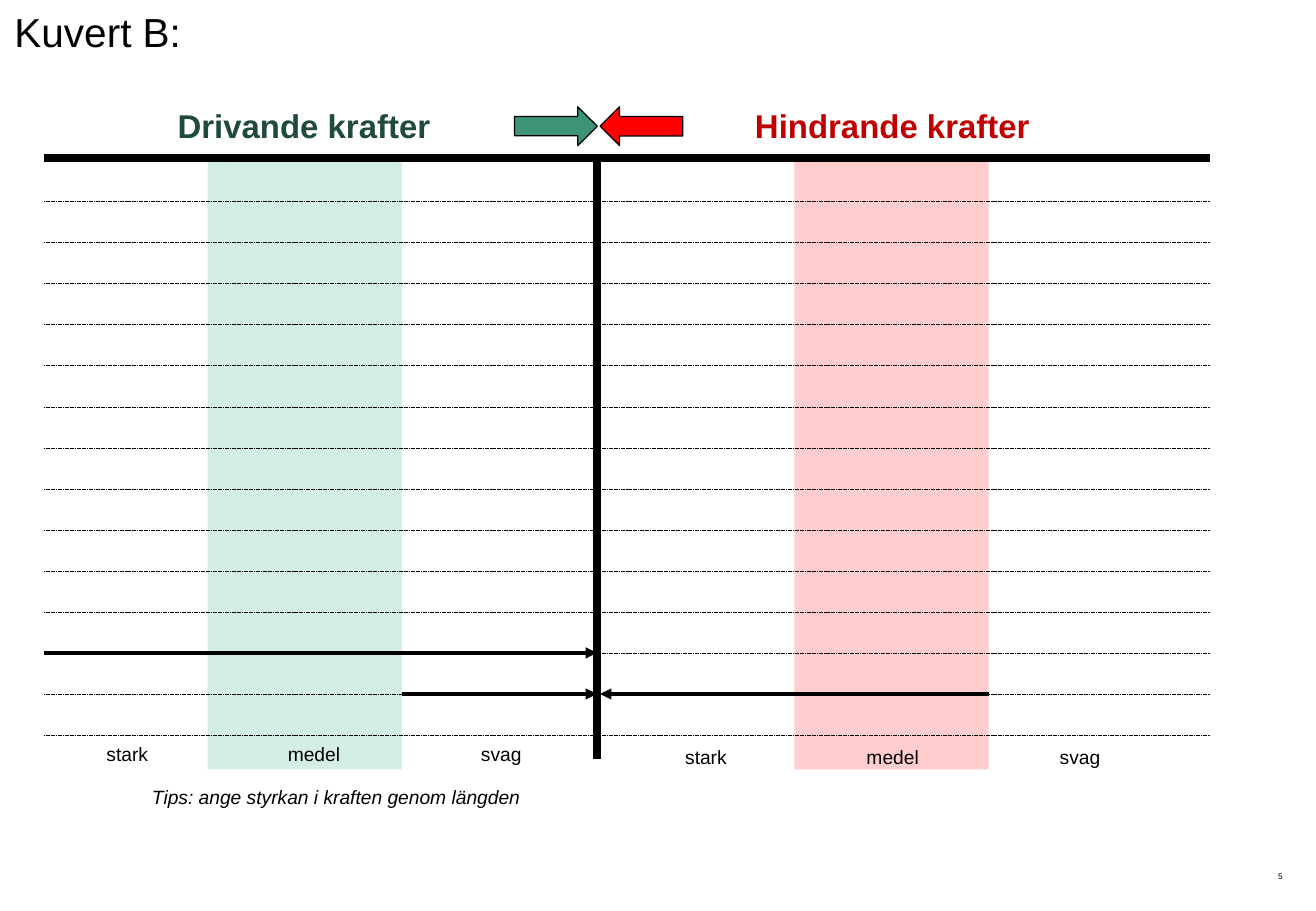
from lxml.etree import SubElement
from pptx import Presentation
from pptx.dml.color import RGBColor
from pptx.enum.dml import MSO_LINE
from pptx.enum.shapes import MSO_CONNECTOR, MSO_SHAPE
from pptx.enum.text import MSO_ANCHOR, MSO_AUTO_SIZE, PP_ALIGN
from pptx.oxml.ns import qn
from pptx.util import Pt

BLACK = "000000"


def color(hex_string):
    return RGBColor.from_string(hex_string)


class ForceFieldSlide:
    """Style and current slide; all lengths are in points."""

    font_name = "Arial"

    def __init__(self, presentation):
        self.slide = presentation.slides.add_slide(presentation.slide_layouts[5])

    def format_text(self, shape, text, size, hex_string=BLACK, bold=False,
                    italic=False, align=PP_ALIGN.LEFT, margins=(7.2, 3.6)):
        frame = shape.text_frame
        frame.text = text
        frame.word_wrap = False
        frame.auto_size = MSO_AUTO_SIZE.SHAPE_TO_FIT_TEXT
        frame.vertical_anchor = MSO_ANCHOR.TOP
        frame.margin_left = frame.margin_right = Pt(margins[0])
        frame.margin_top = frame.margin_bottom = Pt(margins[1])
        paragraph = frame.paragraphs[0]
        paragraph.alignment = align
        font = paragraph.runs[0].font
        font.name, font.size = self.font_name, Pt(size)
        font.bold, font.italic = bold, italic
        font.color.rgb = color(hex_string)

    def title(self, text, left, top, width, height, size):
        shape = self.slide.shapes.title
        shape.left, shape.top = Pt(left), Pt(top)
        shape.width, shape.height = Pt(width), Pt(height)
        self.format_text(shape, text, size)

    def label(self, text, left, top, width, height, size, **style):
        shape = self.slide.shapes.add_textbox(Pt(left), Pt(top), Pt(width), Pt(height))
        self.format_text(shape, text, size, **style)

    def shape(self, kind, left, top, width, height, fill, outline=None, rotation=0):
        shape = self.slide.shapes.add_shape(kind, Pt(left), Pt(top), Pt(width), Pt(height))
        shape.shadow.inherit = False
        shape.rotation = rotation
        shape.fill.solid()
        shape.fill.fore_color.rgb = color(fill)
        if outline:
            shape.line.color.rgb = color(outline)
            shape.line.width = Pt(0.75)
        else:
            shape.line.fill.background()

    def line(self, x1, y1, x2, y2, width, dash=None, arrow=False):
        connector = self.slide.shapes.add_connector(
            MSO_CONNECTOR.STRAIGHT, Pt(x1), Pt(y1), Pt(x2), Pt(y2))
        connector.line.color.rgb = color(BLACK)
        connector.line.width = Pt(width)
        if dash:
            connector.line.dash_style = dash
        properties = connector._element.spPr
        if arrow:
            SubElement(properties.find(qn("a:ln")), qn("a:tailEnd"), type="triangle")
        SubElement(properties, qn("a:effectLst"))


def main():
    presentation = Presentation()
    presentation.slide_width, presentation.slide_height = Pt(780), Pt(540)
    page = ForceFieldSlide(presentation)

    left, right, top = 26, 717, 93.6
    center, hindering_tip = 353.8, 355.7
    row_top, row_gap, row_count = 119.5, 24.32, 14
    rows = [row_top + row_gap * index for index in range(row_count)]
    band_width, driving_band, hindering_band = 115.2, 123.1, 470.9

    # Title and slide number
    page.title("Kuvert B:", 1.4, 0.7, 121, 36, 24)
    page.label("5", 721.4, 516.2, 38.9, 5.8, 4.9, align=PP_ALIGN.RIGHT, margins=(0, 0))

    # Bands of medium strength
    for band_left, fill in ((hindering_band, "FFCDCD"), (driving_band, "D4EDE5")):
        page.shape(MSO_SHAPE.RECTANGLE, band_left, 94.3, band_width, 361.8, fill)

    # Frame
    page.line(left, top, right, top, 4.5)
    page.line(center, top, center, 450, 4.5)

    # Headings
    page.label("Drivande krafter", 96.8, 59, 165.6, 31, 19.5,
               hex_string="1F4A3C", bold=True, align=PP_ALIGN.RIGHT)
    page.label("Hindrande krafter", 440.4, 59, 178.6, 31, 19.5,
               hex_string="C00000", bold=True)

    # Writing rows
    for y in rows:
        page.line(left, y, right, y, 0.25, dash=MSO_LINE.SQUARE_DOT)

    # Example forces
    for start, end, y in ((left, center, rows[11]),
                          (driving_band + band_width, center, rows[12]),
                          (hindering_band + band_width, hindering_tip, rows[12])):
        page.line(start, y, end, y, 2.25, arrow=True)

    # Strength scales
    for scale_left, scale_top in ((56, 436.3), (399, 438.5)):
        for text, offset, width in (("stark", 0, 39.6), ("medel", 107.5, 46), ("svag", 222, 39)):
            page.label(text, scale_left + offset, scale_top, width, 21, 11.4)
    page.label("Tips: ange styrkan i kraften genom längden", 83, 461.8, 235.4, 21, 11.4,
               italic=True)

    # Direction arrows
    for arrow_left, fill, rotation in ((305, "3D9378", 0), (hindering_tip, "FF0000", 180)):
        page.shape(MSO_SHAPE.RIGHT_ARROW, arrow_left, 63.3, 49, 23, fill, BLACK, rotation)

    presentation.save("out.pptx")


if __name__ == "__main__":
    main()
